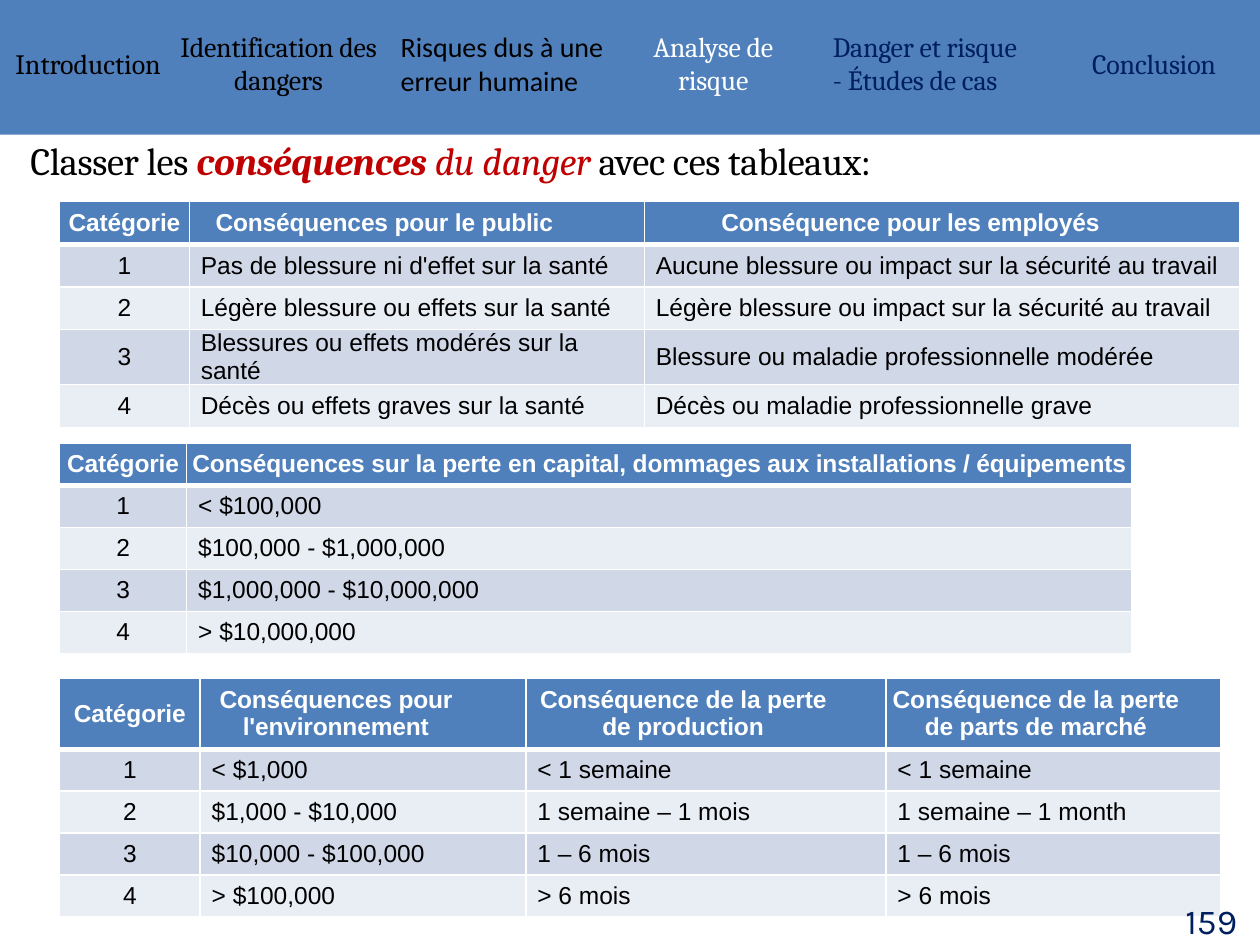
import pptx
import pptx.dml.color
import pptx.enum.shapes
import pptx.enum.text
import pptx.oxml
import pptx.oxml.ns
import pptx.util
from lxml import etree

Pt = pptx.util.Pt
RGBColor = pptx.dml.color.RGBColor
PP_ALIGN = pptx.enum.text.PP_ALIGN
ANCHOR = pptx.enum.text.MSO_ANCHOR

BLUE = RGBColor(0x4F, 0x80, 0xBC)
NAVY = RGBColor(0x00, 0x1F, 0x5F)
RED = RGBColor(0xC0, 0x00, 0x00)
BLACK = RGBColor(0x00, 0x00, 0x00)
WHITE = RGBColor(0xFF, 0xFF, 0xFF)
BANDS = (RGBColor(0xD0, 0xD8, 0xE8), RGBColor(0xE9, 0xED, 0xF4))

CENTER = PP_ALIGN.CENTER
LEFT = PP_ALIGN.LEFT
HEADER = {"name": "Arial", "size": Pt(14), "bold": True, "italic": False}
BODY = {**HEADER, "bold": False}
NAVIGATION = {**BODY, "name": "Cambria", "size": Pt(16)}
TITLE = {**NAVIGATION, "size": Pt(22)}
NUMBER = {**BODY, "name": "Karla", "size": Pt(20)}
NO_MARGINS = dict.fromkeys(("margin_left", "margin_top", "margin_right", "margin_bottom"), 0)


def set_values(target, values):
    for name, value in values.items():
        setattr(target, name, value)


def add_span(para, text, style, color, spacing=0):
    span = para.add_run()
    span.text = text
    set_values(span.font, style)
    span.font.color.rgb = color
    if spacing:
        span._r.get_or_add_rPr().set("spc", str(round(spacing * 100)))


def set_borders(cell, widths):
    properties = cell._tc.get_or_add_tcPr()
    for side, width in zip("LRTB", widths):
        line = etree.SubElement(properties, pptx.oxml.ns.qn("a:ln" + side), w=str(Pt(width)))
        if width:
            fill = etree.SubElement(line, pptx.oxml.ns.qn("a:solidFill"))
            etree.SubElement(fill, pptx.oxml.ns.qn("a:srgbClr"), val=str(WHITE))
        else:
            etree.SubElement(line, pptx.oxml.ns.qn("a:noFill"))


def fill_cell(cell, text, style, color, fill, borders, align=LEFT, left=0, right=0, spacing=0):
    set_borders(cell, borders)
    cell.fill.solid()
    cell.fill.fore_color.rgb = fill
    set_values(cell, {**NO_MARGINS, "margin_left": Pt(left), "margin_right": Pt(right),
                      "vertical_anchor": ANCHOR.MIDDLE})
    frame = cell.text_frame
    for index, line in enumerate(text.split("\n")):
        para = frame.add_paragraph() if index else frame.paragraphs[0]
        para.alignment = align
        add_span(para, line, style, color, spacing)


def add_grid(page, box, widths, heights):
    grid = page.shapes.add_table(len(heights), len(widths), *map(Pt, box)).table
    for column, width in zip(grid.columns, widths):
        column.width = Pt(width)
    for row, height in zip(grid.rows, heights):
        row.height = Pt(height)
    return grid


def add_navigation(page, box):
    left, top, width, height = box
    band = page.shapes.add_shape(pptx.enum.shapes.MSO_SHAPE.RECTANGLE, *map(Pt, box))
    band.shadow.inherit = False
    band.fill.solid()
    band.fill.fore_color.rgb = BLUE
    band.line.fill.background()
    sections = [
        ("Introduction", BLACK, LEFT, 3, "Cambria", 0),
        ("Identification des dangers", BLACK, CENTER, 0, "Cambria", -0.1),
        ("Risques dus à une erreur humaine", BLACK, LEFT, 12.2, "Calibri", 0),
        ("Analyse de risque", WHITE, CENTER, 0, "Cambria", -0.1),
        ("Danger et risque\n- Études de cas", NAVY, LEFT, 17.3, "Cambria", -0.1),
        ("Conclusion", NAVY, CENTER, 0, "Cambria", -0.1),
    ]
    grid = add_grid(page, (left + 5.8, top + 13, width - 11.6, 48.2),
                    (95.8, 115.2, 139.7, 102.2, 146.2, 109.4), (48.2,))
    for cell, (text, color, align, indent, font, spacing) in zip(grid.rows[0].cells, sections):
        fill_cell(cell, text, {**NAVIGATION, "name": font}, color, BLUE, (0, 0, 0, 0),
                  align, indent, 0, spacing)


def add_title(page, box):
    title = page.shapes.title
    title.left, title.top, title.width, title.height = map(Pt, box)
    frame = title.text_frame
    set_values(frame, {**NO_MARGINS, "vertical_anchor": ANCHOR.TOP, "word_wrap": True,
                       "auto_size": pptx.enum.text.MSO_AUTO_SIZE.NONE})
    para = frame.paragraphs[0]
    para.alignment = LEFT
    add_span(para, "Classer les ", TITLE, BLACK, -0.2)
    add_span(para, "conséquences", {**TITLE, "bold": True, "italic": True}, RED, -0.2)
    add_span(para, " du danger ", {**TITLE, "italic": True}, RED, -0.2)
    add_span(para, "avec ces tableaux:", TITLE, BLACK, -0.2)


def add_category_table(page, box, widths, header_height, headers, records):
    row_height = (box[3] - header_height) / len(records)
    grid = add_grid(page, box, widths, [header_height] + [row_height] * len(records))
    titles = [("Catégorie", CENTER, 0, 0)] + headers
    for cell, (text, align, left, right) in zip(grid.rows[0].cells, titles):
        fill_cell(cell, text, HEADER, WHITE, BLUE, (1, 1, 1, 3), align, left, right, -0.1)
    for number, record in enumerate(records, 1):
        fill = BANDS[(number - 1) % 2]
        borders = (1, 1, 3 if number == 1 else 1, 1)
        first, *others = grid.rows[number].cells
        fill_cell(first, str(number), BODY, BLACK, fill, borders, CENTER)
        for cell, text in zip(others, record):
            fill_cell(cell, text, BODY, BLACK, fill, borders, LEFT, 6.6, 7)


def add_page_number(page, box):
    frame = page.shapes.add_textbox(*map(Pt, box)).text_frame
    set_values(frame, {**NO_MARGINS, "margin_left": Pt(2), "word_wrap": True})
    add_span(frame.paragraphs[0], "159", NUMBER, NAVY)


def main():
    deck = pptx.Presentation()
    deck.slide_width, deck.slide_height = Pt(720), Pt(540)
    page = deck.slides.add_slide(deck.slide_layouts[5])
    add_navigation(page, (0, 0, 720, 77))
    add_title(page, (17.3, 78.5, 596, 26.6))
    add_category_table(
        page, (34, 115.2, 674.6, 122), (74.2, 260, 340.4), 24.4,
        [("Conséquences pour le public", LEFT, 15, 0),
         ("Conséquence pour les employés", LEFT, 44, 0)],
        [("Pas de blessure ni d'effet sur la santé",
          "Aucune blessure ou impact sur la sécurité au travail"),
         ("Légère blessure ou effets sur la santé",
          "Légère blessure ou impact sur la sécurité au travail"),
         ("Blessures ou effets modérés sur la santé",
          "Blessure ou maladie professionnelle modérée"),
         ("Décès ou effets graves sur la santé",
          "Décès ou maladie professionnelle grave")])
    add_category_table(
        page, (34, 253.4, 612.7, 120), (72.7, 540), 24,
        [("Conséquences sur la perte en capital, dommages aux installations / équipements",
          CENTER, 0, 0)],
        [("< $100,000",), ("$100,000 - $1,000,000",),
         ("$1,000,000 - $10,000,000",), ("> $10,000,000",)])
    add_category_table(
        page, (34, 387.4, 663.5, 136.6), (80.4, 186.1, 205.8, 191.2), 40.8,
        [("Conséquences pour l'environnement", CENTER, 4, 35),
         ("Conséquence de la perte de production", CENTER, 7, 33),
         ("Conséquence de la perte de parts de marché", CENTER, 3, 23)],
        [("< $1,000", "< 1 semaine", "< 1 semaine"),
         ("$1,000 - $10,000", "1 semaine – 1 mois", "1 semaine – 1 month"),
         ("$10,000 - $100,000", "1 – 6 mois", "1 – 6 mois"),
         ("> $100,000", "> 6 mois", "> 6 mois")])
    add_page_number(page, (675.4, 514, 38.2, 24.5))
    deck.save("out.pptx")


if __name__ == "__main__":
    main()
